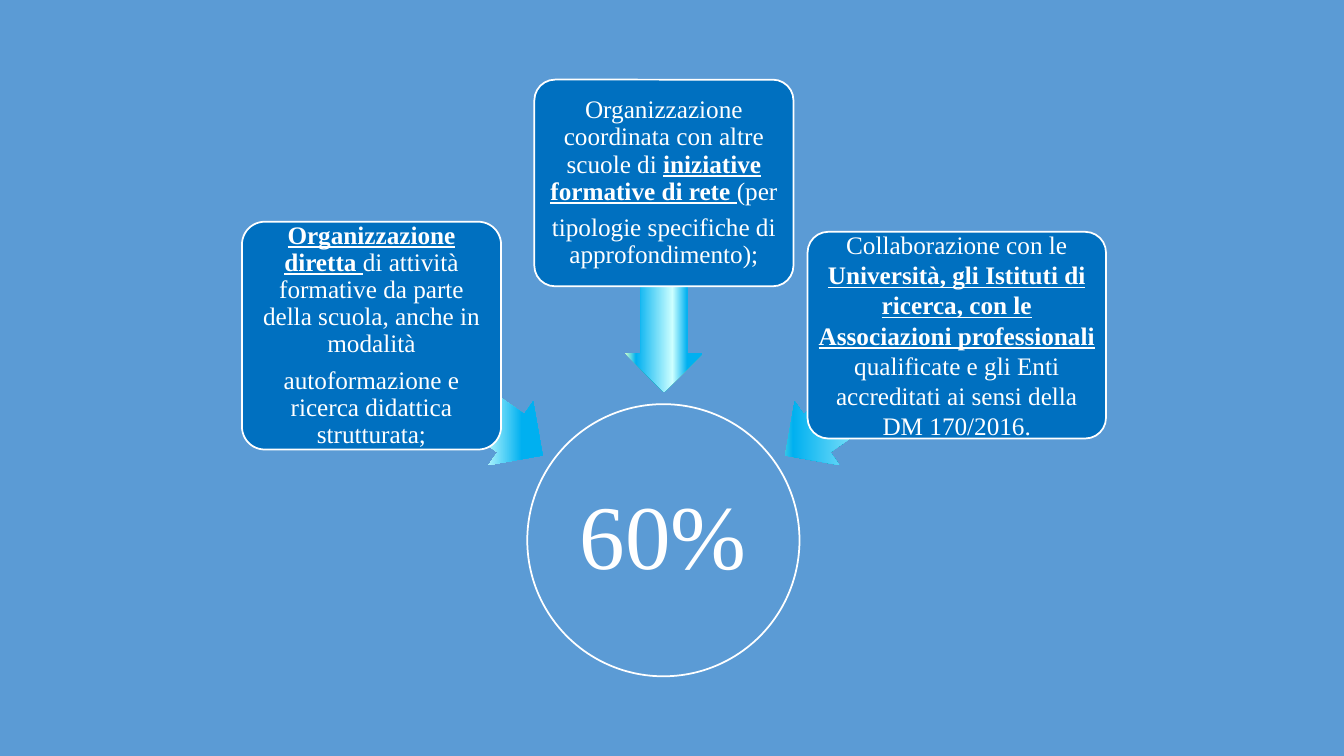
from lxml import etree
from pptx import Presentation
from pptx.dml.color import RGBColor
from pptx.enum.shapes import MSO_SHAPE
from pptx.enum.text import MSO_ANCHOR, PP_ALIGN
from pptx.oxml.ns import qn
from pptx.util import Inches, Pt

SKY = RGBColor(0x5B, 0x9B, 0xD5)
BLUE = RGBColor(0x00, 0x70, 0xC0)
WHITE = RGBColor(0xFF, 0xFF, 0xFF)
GLOW = [(0, "CCFFCC"), (14, "00B0F0"), (61, "CCFFFF"), (80, "00B0F0")]
FONT = "Times New Roman"

# Each card: box, line spacing, paragraphs of (text, emphasised) runs;
# each arrow: left, top, rotation
BRANCHES = [
    ((2.4, 2.2, 2.57, 2.26), 0.9, [
        [("Organizzazione diretta ", True),
         ("di attività formative da parte della scuola, anche in modalità", False)],
        [("autoformazione e ricerca didattica strutturata;", False)],
    ], (3.5, 3.54, 215)),
    ((5.3, 0.79, 2.57, 2.05), 0.9, [
        [("Organizzazione coordinata con altre scuole di ", False),
         ("iniziative formative di rete ", True), ("(per", False)],
        [("tipologie specifiche di approfondimento);", False)],
    ], (5.55, 2.47, 270)),
    ((8.01, 2.3, 2.96, 2.05), None, [
        [("Collaborazione con le ", False),
         ("Università, gli Istituti di ricerca, con le", True)],
        [("Associazioni professionali ", True),
         ("qualificate e gli Enti accreditati ai sensi della DM 170/2016.", False)],
    ], (7.6, 3.54, 325)),
]


def add_node(s, kind, box, fill, paragraphs, size, spacing, inset):
    """Outlined shape with centred text."""
    sp = s.shapes.add_shape(kind, *[Inches(v) for v in box])
    sp.shadow.inherit = False
    sp.fill.solid()
    sp.fill.fore_color.rgb = fill
    sp.line.color.rgb = WHITE
    sp.line.width = Pt(1.25)
    tf = sp.text_frame
    margins = {f"margin_{side}": Inches(inset)
               for side in ("left", "top", "right", "bottom")}
    frame_format = {"word_wrap": True, "vertical_anchor": MSO_ANCHOR.MIDDLE, **margins}
    for name, value in frame_format.items():
        setattr(tf, name, value)
    for i, runs in enumerate(paragraphs):
        p = tf.add_paragraph() if i else tf.paragraphs[0]
        p.alignment = PP_ALIGN.CENTER
        if spacing:
            p.line_spacing = spacing
            p.space_after = Pt(0.35 * size)
        for text, strong in runs:
            r = p.add_run()
            r.text = text
            r.font.color.rgb = WHITE
            run_format = {"name": FONT, "size": Pt(size),
                          "bold": strong, "underline": strong}
            for name, value in run_format.items():
                setattr(r.font, name, value)
    return sp


def add_arrow(s, left, top, rotation):
    """Arrow towards the circle, its gradient staying level with the slide."""
    sp = s.shapes.add_shape(MSO_SHAPE.LEFT_ARROW, Inches(left), Inches(top),
                            Inches(2.07), Inches(0.77))
    sp.shadow.inherit = False
    sp.rotation = rotation
    sp.adjustments[0], sp.adjustments[1] = 0.6, 0.5
    sp.line.fill.background()
    sp.fill.gradient()
    grad = sp._element.spPr.find(qn("a:gradFill"))
    grad.set("rotWithShape", "0")
    for child in list(grad):
        grad.remove(child)
    stops = etree.SubElement(grad, qn("a:gsLst"))
    for position, color in GLOW:
        stop = etree.SubElement(stops, qn("a:gs"), pos=str(position * 1000))
        etree.SubElement(stop, qn("a:srgbClr"), val=color)
    etree.SubElement(grad, qn("a:lin"), ang="0", scaled="0")


def add_branch(s, box, spacing, paragraphs, arrow):
    """Arrow with its card in front."""
    add_arrow(s, *arrow)
    card = add_node(s, MSO_SHAPE.ROUNDED_RECTANGLE, box, BLUE,
                    paragraphs, 18, spacing, 0.04)
    card.adjustments[0] = 0.1


def main():
    prs = Presentation()
    prs.slide_width, prs.slide_height = Inches(13.33), Inches(7.5)
    s = prs.slides.add_slide(prs.slide_layouts[6])
    s.background.fill.solid()
    s.background.fill.fore_color.rgb = SKY

    # Central circle, then the three branches
    add_node(s, MSO_SHAPE.OVAL, (5.23, 4.01, 2.7, 2.7), SKY,
             [[("60%", False)]], 65, 0.9, 0.05)
    for branch in BRANCHES:
        add_branch(s, *branch)
    prs.save("out.pptx")


if __name__ == "__main__":
    main()
